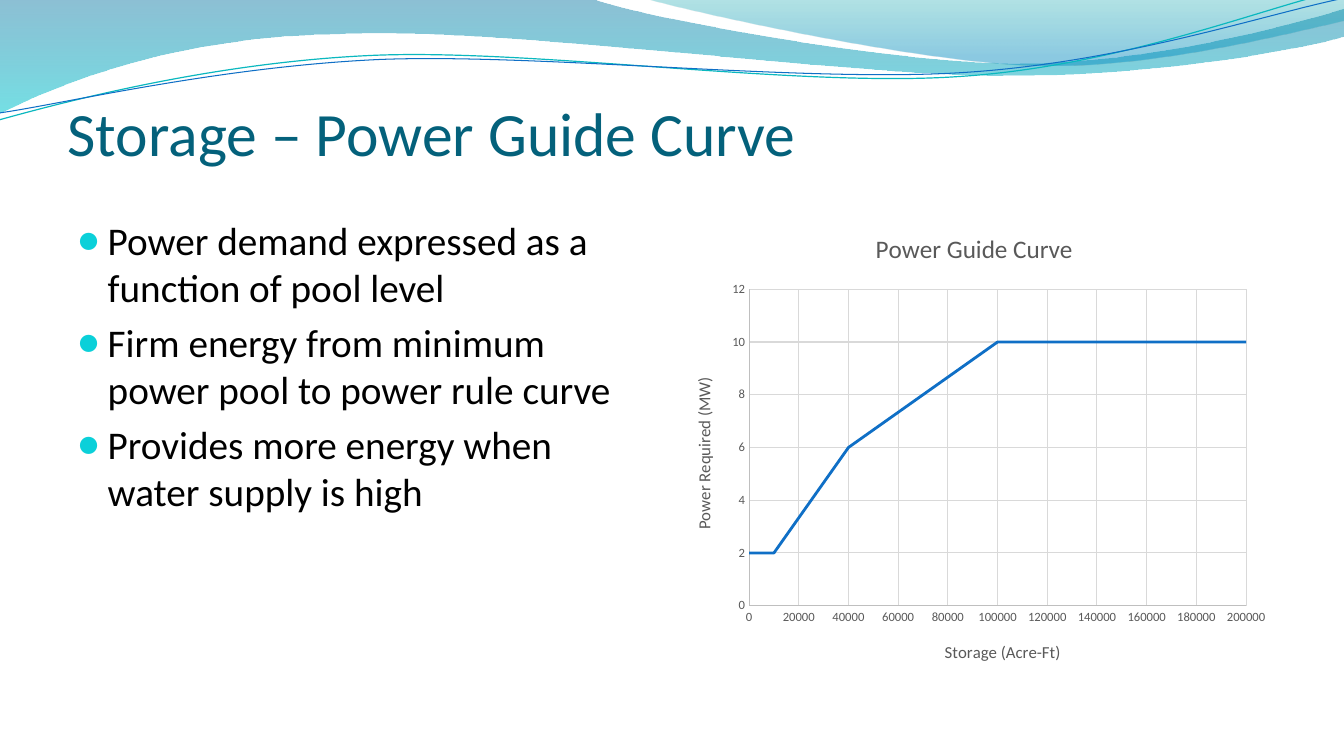
from math import cos, radians, sin

from lxml import etree
from pptx import Presentation
from pptx.chart.data import XyChartData
from pptx.dml.color import RGBColor
from pptx.enum.chart import XL_CHART_TYPE, XL_MARKER_STYLE, XL_TICK_MARK
from pptx.enum.text import MSO_ANCHOR
from pptx.oxml import parse_xml
from pptx.oxml.ns import nsdecls, qn
from pptx.util import Inches, Pt

SCATTER = XL_CHART_TYPE.XY_SCATTER_LINES_NO_MARKERS
NO_MARK = XL_MARKER_STYLE.NONE
NO_TICK = XL_TICK_MARK.NONE
BOTTOM = MSO_ANCHOR.BOTTOM

FONT = "Calibri"
TITLE = "Storage – Power Guide Curve"
BULLETS = [
    "Power demand expressed as a function of pool level",
    "Firm energy from minimum power pool to power rule curve",
    "Provides more energy when water supply is high",
]
CURVE = [(0, 2), (10000, 2), (40000, 6), (100000, 10), (200000, 10)]
CHART = (6.67, 2.1, 6, 4.65)
GRAY, GRID, EDGE, BLUE = "595959", "D9D9D9", "BFBFBF", "0F6FC6"
TILT = 2.7

# Each path is a list of points: two numbers make a line, six a cubic curve.
BANDS = [
    ([(0, 0), (5.87, -0.01), (6.34, 0.17, 8.85, 0.63, 10.11, 0.63),
      (11.38, 0.63, 12.78, 0.26, 13.33, 0.09), (13.35, 0.36),
      (13.11, 0.44, 11.6, 0.76, 9.94, 0.75), (8.29, 0.75, 5.09, 0.28, 3.43, 0.34),
      (1.72, 0.36, 0.61, 0.83, -0.01, 1.13)],
     [(0, "0074A1", 45), (100, "00C6CF", 55)]),
    ([(6.39, -0.01), (6.79, 0.11, 9.09, 0.62, 10.25, 0.65),
      (11.41, 0.69, 12.82, 0.32, 13.33, 0.21), (13.33, 0)],
     [(0, "00A1A9", 30), (80, "008BBF", 45)]),
]
WAVES = [
    ([(-0.01, 1.19), (0.64, 1.01, 2.11, 0.62, 3.69, 0.55),
      (5.27, 0.48, 7.9, 0.87, 9.5, 0.76), (11.1, 0.66, 12.52, 0.08, 13.31, -0.1)],
     (6.65, 0.575), "0AB8BF", 0.85),
    ([(0, 1.12), (0.63, 1.03, 2.18, 0.66, 3.78, 0.59),
      (5.37, 0.53, 7.96, 0.82, 9.55, 0.72), (11.15, 0.62, 12.55, 0.14, 13.34, -0.02)],
     (6.67, 0.59), BLUE, 0.75),
]


def rgb(code):
    """Turn a hex string into a colour."""
    return RGBColor.from_string(code)


def style(font, size, color):
    """Set the face, size and colour of a font."""
    font.name, font.size, font.bold = FONT, Pt(size), False
    font.color.rgb = rgb(color)


def turn(part, mid):
    """Turn the points of a path part about a middle point."""
    c, s = cos(radians(TILT)), sin(radians(TILT))
    out = []
    for x, y in zip(part[::2], part[1::2]):
        dx, dy = x - mid[0], y - mid[1]
        out += [mid[0] + dx * c - dy * s, mid[1] + dx * s + dy * c]
    return tuple(out)


def draw(slide, path, close):
    """Draw one freeform, joining the three points of each curve part."""
    flat = [Inches(v) for part in path for v in part]
    points = list(zip(flat[::2], flat[1::2]))
    pen = slide.shapes.build_freeform(*points[0])
    pen.add_line_segments(points[1:], close=close)
    shape = pen.convert_to_shape()
    shape.shadow.inherit = False
    lines = iter(list(shape._element.iter(qn("a:lnTo"))))
    for part in path[1:]:
        first = next(lines)
        if len(part) == 6:
            first.tag = qn("a:cubicBezTo")
            for _ in range(2):
                extra = next(lines)
                first.append(extra[0])
                extra.getparent().remove(extra)
    return shape


def shade(shape, stops):
    """Fill a shape with a downward gradient of see-through colours."""
    marks = "".join(
        f'<a:gs pos="{at * 1000}"><a:srgbClr val="{color}">'
        f'<a:alpha val="{alpha * 1000}"/></a:srgbClr></a:gs>'
        for at, color, alpha in stops)
    fill = parse_xml(f'<a:gradFill {nsdecls("a")} rotWithShape="1"><a:gsLst>{marks}</a:gsLst>'
                     '<a:lin ang="5400000" scaled="0"/></a:gradFill>')
    shape.line.fill.background()
    shape._element.spPr.find(qn("a:custGeom")).addnext(fill)


def add_text(slide, box, inset):
    """Add a wrapping text box and return its frame."""
    frame = slide.shapes.add_textbox(*map(Inches, box)).text_frame
    frame.word_wrap = True
    (frame.margin_left, frame.margin_top,
     frame.margin_right, frame.margin_bottom) = map(Inches, inset)
    return frame


def add_bullet(para):
    """Give a paragraph a round bullet and a hanging indent."""
    props = para._p.get_or_add_pPr()
    props.set("marL", str(Inches(0.3)))
    props.set("indent", str(-Inches(0.3)))
    color = etree.SubElement(props, qn("a:buClr"))
    etree.SubElement(color, qn("a:srgbClr"), val="0BD0D9")
    etree.SubElement(props, qn("a:buSzPct"), val="95000")
    etree.SubElement(props, qn("a:buFont"), typeface=FONT)
    etree.SubElement(props, qn("a:buChar"), char="●")


def layout(*spot):
    """Make a manual chart layout from inches within the chart."""
    inner = '<c:layoutTarget val="inner"/>' if len(spot) == 4 else ""
    modes = '<c:xMode val="edge"/><c:yMode val="edge"/>'
    values = "".join(f'<c:{key} val="{val / full}"/>'
                     for key, val, full in zip("xywh", spot, CHART[2:] * 2))
    return parse_xml(f'<c:layout {nsdecls("c")}><c:manualLayout>{inner}{modes}{values}'
                     '</c:manualLayout></c:layout>')


def drop_layout(node):
    """Remove the automatic layout of a chart part."""
    for old in node.findall(qn("c:layout")):
        node.remove(old)


def label(title, text, size, x, y):
    """Write a chart or axis title and place it."""
    title.text_frame.text = text
    style(title.text_frame.paragraphs[0].font, size, GRAY)
    node = title._element
    drop_layout(node)
    node.find(qn("c:tx")).addnext(layout(x, y))


def set_axis(axis, top, unit):
    """Scale and style one axis."""
    axis.minimum_scale, axis.maximum_scale, axis.major_unit = 0, top, unit
    axis.major_tick_mark = axis.minor_tick_mark = NO_TICK
    axis.has_major_gridlines = True
    for line, color in ((axis.format.line, EDGE), (axis.major_gridlines.format.line, GRID)):
        line.color.rgb, line.width = rgb(color), Pt(0.75)
    style(axis.tick_labels.font, 9, GRAY)
    axis.tick_labels.number_format = "General"
    axis.tick_labels.number_format_is_linked = False


def add_curve(slide):
    """Add the power guide chart."""
    data = XyChartData()
    series = data.add_series("Series 1")
    for x, y in CURVE:
        series.add_data_point(x, y)
    chart = slide.shapes.add_chart(SCATTER, *map(Inches, CHART), data).chart
    style(chart.font, 10, "000000")
    chart.has_legend = False
    across, up = chart.category_axis, chart.value_axis
    set_axis(across, 200000, 20000)
    set_axis(up, 12, 2)
    label(chart.chart_title, "Power Guide Curve", 18, 1.97, 0.15)
    label(across.axis_title, "Storage (Acre-Ft)", 12, 2.67, 4.23)
    label(up.axis_title, "Power Required (MW)", 12, 0.17, 1.61)
    up.axis_title.text_frame._txBody.bodyPr.set("rot", "-5400000")
    line = chart.plots[0].series[0]
    line.smooth = False
    line.marker.style = NO_MARK
    line.format.line.color.rgb, line.format.line.width = rgb(BLUE), Pt(2)
    plot = chart._chartSpace.chart.plotArea
    drop_layout(plot)
    plot.insert(0, layout(0.76, 0.77, 4.93, 3.14))


def main():
    """Build the slide and save it."""
    deck = Presentation()
    deck.slide_width, deck.slide_height = Inches(13.33), Inches(7.5)
    slide = deck.slides.add_slide(deck.slide_layouts[6])
    for path, stops in BANDS:
        shade(draw(slide, path, True), stops)
    for path, mid, color, width in WAVES:
        wave = draw(slide, [turn(part, mid) for part in path], False)
        wave.rotation = 360 - TILT
        wave.fill.background()
        wave.line.color.rgb, wave.line.width = rgb(color), Pt(width)
    head = add_text(slide, (0.67, 0.42, 12, 1.25), (0, 0.05, 0, 0))
    head.vertical_anchor = BOTTOM
    head.text = TITLE
    style(head.paragraphs[0].font, 44, "04617B")
    body = add_text(slide, (0.67, 2.1, 5.89, 5.17), (0.1, 0.05, 0.1, 0.05))
    body.text = "\n".join(BULLETS)
    for i, para in enumerate(body.paragraphs):
        para.space_before = Pt(5.6 if i else 0)
        add_bullet(para)
        style(para.font, 28, "000000")
    add_curve(slide)
    deck.save("out.pptx")


if __name__ == "__main__":
    main()
